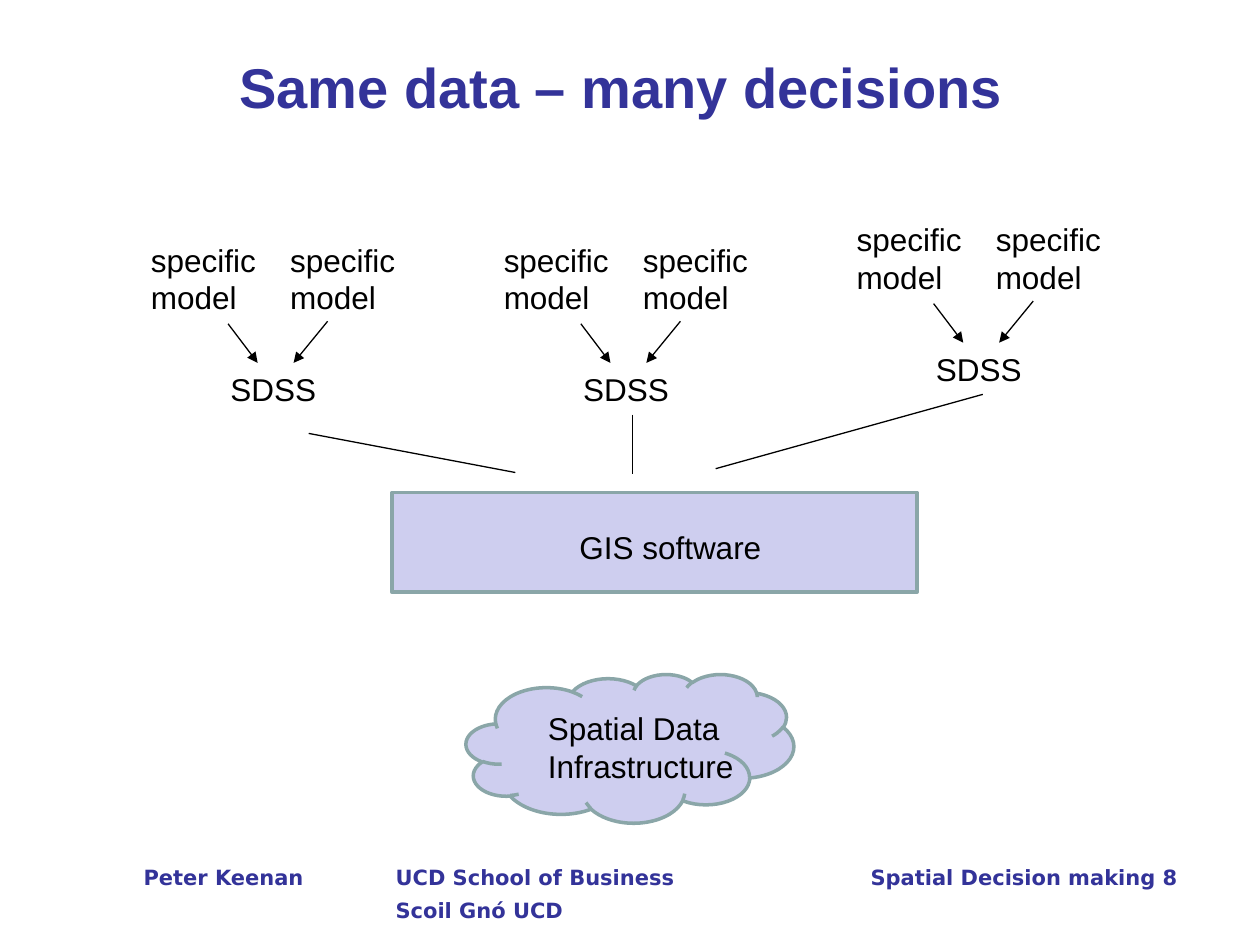
from dataclasses import dataclass

from lxml.etree import SubElement
from pptx import Presentation
from pptx.dml.color import RGBColor
from pptx.enum.shapes import MSO_CONNECTOR, MSO_SHAPE
from pptx.enum.text import MSO_ANCHOR, PP_ALIGN
from pptx.oxml.ns import qn
from pptx.util import Inches, Pt


@dataclass(frozen=True)
class Theme:
    heading: RGBColor = RGBColor(0x33, 0x33, 0x99)
    ink: RGBColor = RGBColor(0, 0, 0)
    panel: RGBColor = RGBColor(0xCE, 0xCE, 0xEF)
    border: RGBColor = RGBColor(0x8A, 0xA6, 0xA8)
    font: str = "Arial"
    footer_font: str = "DejaVu Sans"
    title_size: int = 32
    body_size: int = 18
    footer_size: int = 12
    border_width: float = 2
    line_width: float = 0.75


THEME = Theme()
COLUMNS, ROWS = 100, 75  # the slide as a grid of square cells
CELL = Inches(10) / COLUMNS


def cells(*counts):
    return [round(count * CELL) for count in counts]


def style(paragraph, size, color, font=THEME.font, bold=False):
    paragraph.font.size = Pt(size)
    paragraph.font.name = font
    paragraph.font.bold = bold
    paragraph.font.color.rgb = color


def add_label(parent, lines, left, top, width, height):
    frame = parent.add_textbox(*cells(left, top, width, height)).text_frame
    frame.word_wrap = True
    frame.text = "\n".join(lines)
    for paragraph in frame.paragraphs:
        style(paragraph, THEME.body_size, THEME.ink)


def add_panel(parent, preset, left, top, width, height):
    panel = parent.add_shape(preset, *cells(left, top, width, height))
    panel.shadow.inherit = False
    panel.fill.solid()
    panel.fill.fore_color.rgb = THEME.panel
    panel.line.color.rgb = THEME.border
    panel.line.width = Pt(THEME.border_width)


def add_line(parent, start, end, arrow=False):
    link = parent.add_connector(MSO_CONNECTOR.STRAIGHT, *cells(*start, *end))
    link.line.color.rgb = THEME.ink
    link.line.width = Pt(THEME.line_width)
    if arrow:
        SubElement(link.line._get_or_add_ln(), qn("a:tailEnd"), type="triangle")
    SubElement(link._element.spPr, qn("a:effectLst"))


def add_sdss(slide, left, top):
    """Two specific models feeding one decision support system."""
    group = slide.shapes.add_group_shape().shapes
    add_label(group, ["SDSS"], left + 6.3, top + 10.25, 9.4, 4)
    for model_left in (left, left + 11.05):
        add_label(group, ["specific", "model"], model_left, top, 11, 7.1)
    add_line(group, (left + 7.1, top + 7.1), (left + 9.45, top + 10.2), arrow=True)
    add_line(group, (left + 15, top + 6.9), (left + 12.3, top + 10.2), arrow=True)


def add_title(slide, text):
    title = slide.shapes.title
    title.left, title.top, title.width, title.height = cells(4.3, 3, 90, 7.7)
    title.text_frame.text = text
    title.text_frame.vertical_anchor = MSO_ANCHOR.MIDDLE
    heading = title.text_frame.paragraphs[0]
    heading.alignment = PP_ALIGN.CENTER
    style(heading, THEME.title_size, THEME.heading, bold=True)


def add_footer(slide, lines, tab_columns):
    frame = slide.shapes.add_textbox(*cells(11.4, 68, 84.3, 5.2)).text_frame
    frame.word_wrap = True
    frame.margin_left = frame.margin_right = 0
    frame.margin_top = frame.margin_bottom = 0
    frame.text = "\n".join(lines)
    for paragraph in frame.paragraphs:
        paragraph.line_spacing = 1.3
        tabs = SubElement(paragraph._p.get_or_add_pPr(), qn("a:tabLst"))
        for position in cells(*tab_columns):
            SubElement(tabs, qn("a:tab"), pos=str(position), algn="l")
        style(paragraph, THEME.footer_size, THEME.heading, THEME.footer_font, True)


def main():
    deck = Presentation()
    deck.slide_width, deck.slide_height = cells(COLUMNS, ROWS)
    slide = deck.slides.add_slide(deck.slide_layouts[5])

    add_footer(
        slide,
        ["Peter Keenan\tUCD School of Business\tSpatial Decision making 8",
         "\tScoil Gnó UCD"],
        tab_columns=(20, 57.7),
    )
    add_title(slide, "Same data – many decisions")

    # Shared software
    add_panel(slide.shapes, MSO_SHAPE.RECTANGLE, 31.1, 39.1, 41.7, 7.9)
    add_label(slide.shapes, ["GIS software"], 45, 41.4, 20.7, 4)

    # Shared data
    data = slide.shapes.add_group_shape().shapes
    add_panel(data, MSO_SHAPE.CLOUD, 37, 53.5, 26, 11.8)
    add_label(data, ["Spatial Data", "Infrastructure"], 42.5, 55.8, 18.9, 7.1)

    # Decision support systems, evenly spaced, the last one raised
    for column, top in enumerate((18.6, 18.6, 17)):
        add_sdss(slide, 11 + 28 * column, top)

    # Links from the systems to the software
    for start, end in (
        ((24.5, 34.4), (40.9, 37.5)),
        ((50.2, 32.9), (50.2, 37.6)),
        ((78, 31.3), (56.8, 37.2)),
    ):
        add_line(slide.shapes, start, end)

    deck.save("out.pptx")


if __name__ == "__main__":
    main()
